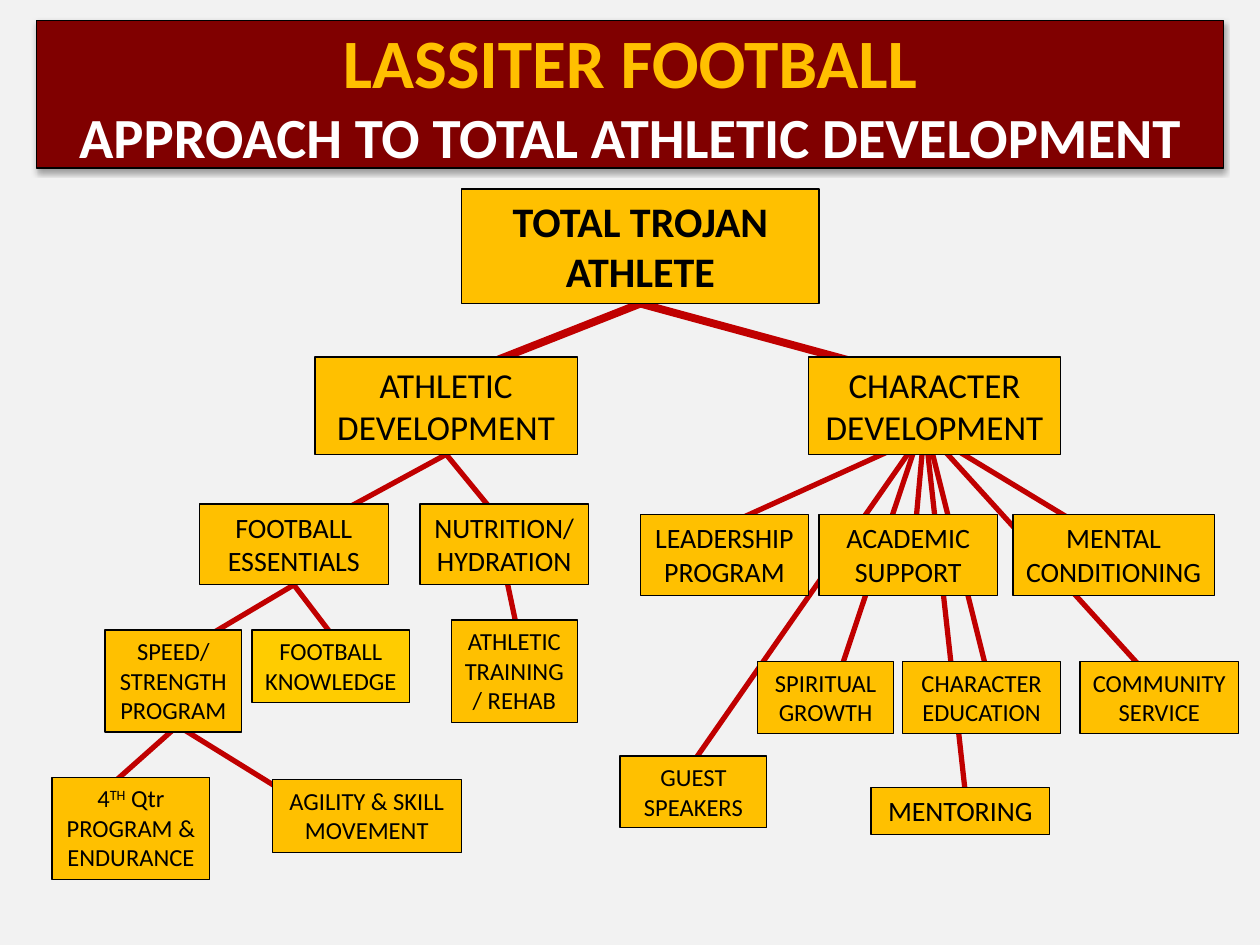
import pptx
import pptx.util
import pptx.dml.color
import pptx.enum.shapes
import pptx.enum.text
import pptx.oxml
import pptx.oxml.ns

Cm, Pt = pptx.util.Cm, pptx.util.Pt
NS = pptx.oxml.ns.nsdecls("a")
GOLD, RED, BLACK, WHITE = "FFC000", "C00000", "000000", "FFFFFF"

HEAD = [("LASSITER FOOTBALL", 39.6, GOLD),
        ("APPROACH TO TOTAL ATHLETIC DEVELOPMENT", 32.4, WHITE)]

BOXES = {
    "total": ("TOTAL TROJAN ATHLETE", 24, 9.31, 3.81, 7.2, 2.31),
    "body": ("ATHLETIC DEVELOPMENT", 20, 6.35, 7.2, 5.29, 1.96),
    "mind": ("CHARACTER DEVELOPMENT", 20, 16.3, 7.2, 5.08, 1.96),
    "basics": ("FOOTBALL ESSENTIALS", 16, 4.02, 10.16, 3.81, 1.63),
    "food": ("NUTRITION/ HYDRATION", 16, 8.47, 10.16, 3.39, 1.63),
    "lead": ("LEADERSHIP PROGRAM", 16, 12.91, 10.37, 3.39, 1.63),
    "values": ("CHARACTER EDUCATION", 14, 18.2, 13.34, 3.18, 1.45),
    "mental": ("MENTAL CONDITIONING", 16, 20.42, 10.37, 4.06, 1.63),
    "school": ("ACADEMIC SUPPORT", 16, 16.51, 10.37, 3.6, 1.63),
    "fourth": ("4^TH^ Qtr PROGRAM & ENDURANCE", 14, 1.05, 15.67, 3.18, 2.06),
    "rehab": ("ATHLETIC TRAINING / REHAB", 14, 9.1, 12.5, 2.54, 2.06),
    "speed": ("SPEED/ STRENGTH PROGRAM", 14, 2.12, 12.7, 2.75, 2.06),
    "mentor": ("MENTORING", 16, 17.56, 15.88, 3.6, 0.94),
    "guest": ("GUEST SPEAKERS", 14, 12.5, 15.24, 2.96, 1.45),
    "spirit": ("SPIRITUAL GROWTH", 14, 15.27, 13.34, 2.75, 1.45),
    "service": ("COMMUNITY SERVICE", 14, 21.77, 13.34, 3.2, 1.45),
    "tactics": ("FOOTBALL KNOWLEDGE", 14, 5.08, 12.7, 3.18, 1.47),
    "skill": ("AGILITY & SKILL MOVEMENT", 14, 5.49, 15.72, 3.81, 1.47),
}
FILLS = {"tactics": "FFCC00"}

LINKS = [
    ("total", 4.5, [(18.42, 7.62), (9.1, 7.62)]),
    ("body", 3, [(10.16, 10.58), (6.77, 10.37)]),
    ("basics", 3, [(6.77, 12.9), (3.5, 13.23)]),
    ((10.16, 11.43), 3, [(10.46, 12.85)]),
    ((3.58, 14.63), 3, [(1.7, 16.3), (5.92, 16.08)]),
    ((19.05, 9.1), 3, [(23.28, 13.76)]),
    ((18.84, 8.68), 3, [(14.6, 10.6)]),
    ((18.63, 8.68), 3, [(18.42, 11), (21.8, 10.6), (13.76, 15.67)]),
    ((18.63, 8.47), 3, [(19.47, 16.08), (16.93, 13.55), (19.9, 13.55)]),
]


def rgb(code):
    return pptx.dml.color.RGBColor.from_string(code)


def paint(shape, fill):
    shape.fill.solid()
    shape.fill.fore_color.rgb = rgb(fill)
    shape.line.color.rgb = rgb(BLACK)
    shape.line.width = Pt(0.75)


def add_head(slide):
    title = slide.shapes.title
    title.left, title.top, title.width, title.height = map(Cm, (0.74, 0.42, 23.93, 2.97))
    paint(title, "800000")
    title._element.spPr.append(pptx.oxml.parse_xml(
        f'<a:effectLst {NS}><a:outerShdw blurRad="{Pt(3.1)}" dist="{Pt(1.8)}" '
        f'dir="5400000" rotWithShape="0"><a:srgbClr val="{BLACK}">'
        '<a:alpha val="35000"/></a:srgbClr></a:outerShdw></a:effectLst>'))
    frame = title.text_frame
    frame.word_wrap = True
    frame.auto_size = pptx.enum.text.MSO_AUTO_SIZE.NONE
    frame.vertical_anchor = pptx.enum.text.MSO_ANCHOR.MIDDLE
    para = frame.paragraphs[0]
    para.alignment = pptx.enum.text.PP_ALIGN.CENTER
    para.font.name, para.font.bold = "Calibri", True
    for text, size, color in HEAD:
        if para.runs:
            para.add_line_break()
        run = para.add_run()
        run.text = text
        run.font.size = Pt(size)
        run.font.color.rgb = rgb(color)
    para.runs[0]._r.get_or_add_rPr().insert(0, pptx.oxml.parse_xml(
        f'<a:ln {NS} w="{Pt(0.75)}"><a:solidFill><a:srgbClr val="{WHITE}"/>'
        '</a:solidFill></a:ln>'))


def add_box(slide, name):
    text, size, *place = BOXES[name]
    box = slide.shapes.add_shape(
        pptx.enum.shapes.MSO_SHAPE.RECTANGLE, *map(Cm, place))
    box.shadow.inherit = False
    paint(box, FILLS.get(name, GOLD))
    frame = box.text_frame
    frame.word_wrap = True
    frame.auto_size = pptx.enum.text.MSO_AUTO_SIZE.SHAPE_TO_FIT_TEXT
    frame.vertical_anchor = pptx.enum.text.MSO_ANCHOR.TOP
    para = frame.paragraphs[0]
    para.alignment = pptx.enum.text.PP_ALIGN.CENTER
    para.font.name, para.font.size = "Calibri", Pt(size)
    para.font.bold = name == "total"
    para.font.color.rgb = rgb(BLACK)
    for i, part in enumerate(text.split("^")):
        run = para.add_run()
        run.text = part
        if i % 2:
            run._r.get_or_add_rPr().set("baseline", "30000")
    return box


def add_link(slide, boxes, start, end, width):
    joined = start in boxes
    x, y = (0, 0) if joined else start
    link = slide.shapes.add_connector(
        pptx.enum.shapes.MSO_CONNECTOR.STRAIGHT, *map(Cm, (x, y, *end)))
    if joined:
        link.begin_connect(boxes[start], 2)
    link.line.color.rgb = rgb(RED)
    link.line.width = Pt(width)
    link._element.spPr.append(pptx.oxml.parse_xml(f"<a:effectLst {NS}/>"))
    slide.shapes._spTree.insert(2, link._element)


def main():
    deck = pptx.Presentation()
    deck.slide_width, deck.slide_height = Cm(25.4), Cm(19.05)
    slide = deck.slides.add_slide(deck.slide_layouts[5])
    slide.background.fill.solid()
    slide.background.fill.fore_color.rgb = rgb("F2F2F2")
    add_head(slide)
    boxes = {name: add_box(slide, name) for name in BOXES}
    for start, width, ends in LINKS:
        for end in ends:
            add_link(slide, boxes, start, end, width)
    deck.save("out.pptx")


if __name__ == "__main__":
    main()
